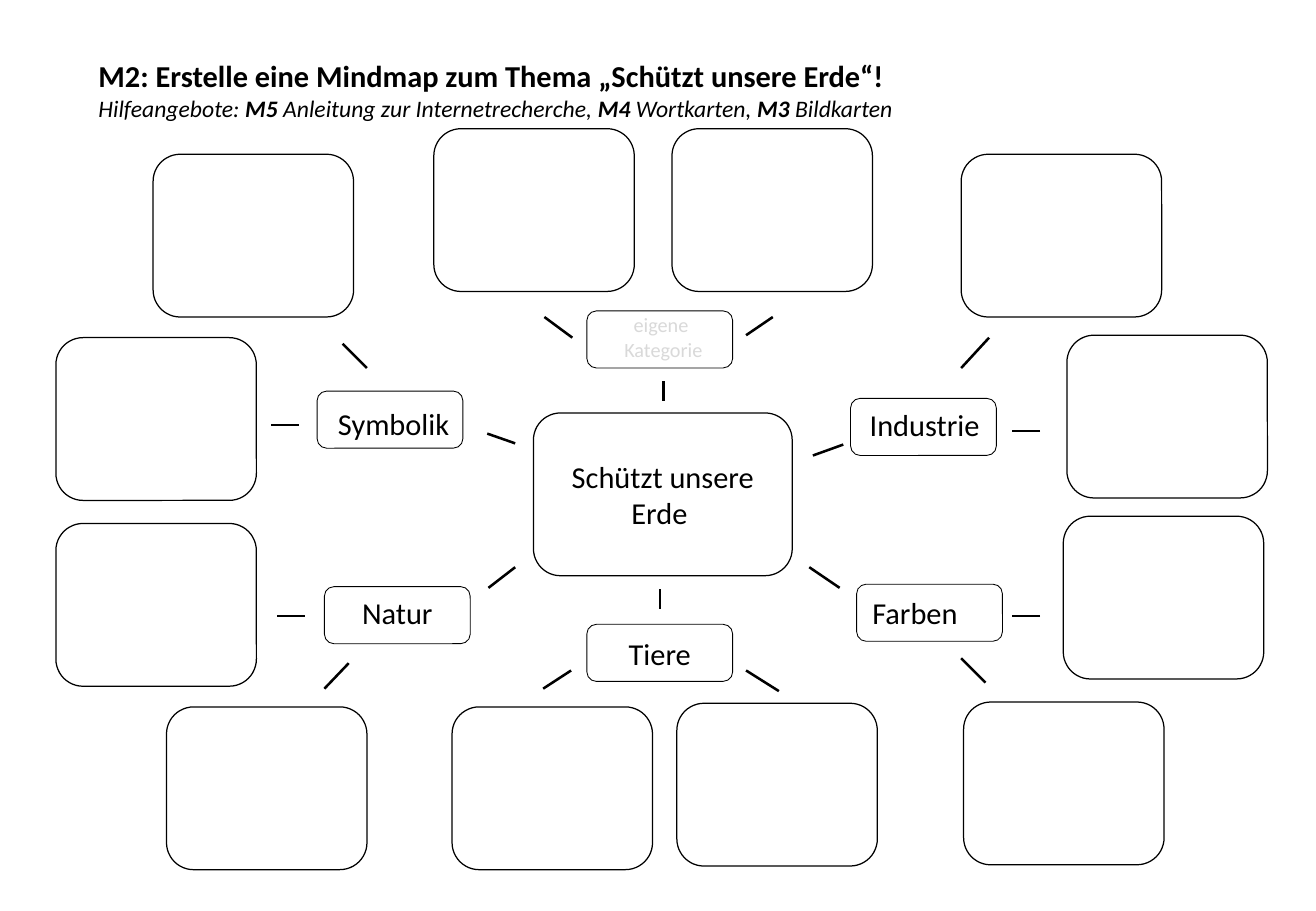
from pptx import Presentation
from pptx.dml.color import RGBColor
from pptx.enum.shapes import MSO_CONNECTOR, MSO_SHAPE
from pptx.enum.text import MSO_ANCHOR, MSO_AUTO_SIZE, PP_ALIGN
from pptx.util import Inches, Pt
from lxml.etree import SubElement
from pptx.oxml.ns import qn

BLACK, WHITE, GREY = "000000", "FFFFFF", "D9D9D9"
CARD = (1.65, 1.34)
LABEL = (1.2, 0.47)
CENTRE = (4.39, 3.4, 2.13, 1.34)

# Cards and ticks are offsets from the label's corner; nudge moves its text.
BRANCHES = [
    dict(lines=["Symbolik"], at=(2.61, 3.22), nudge=(0.03, 0.03),
         cards=[(-2.15, -0.44), (-1.35, -1.95)],
         ticks=[(1.63, 0.43, 1.4, 0.35), (-0.15, 0.28, -0.38, 0.28),
                (0.41, -0.19, 0.21, -0.39)]),
    dict(lines=["eigene ", "Kategorie"], at=(4.83, 2.56), nudge=(0.03, -0.02),
         size=12, color=GREY,
         cards=[(-1.26, -1.5), (0.7, -1.5)],
         ticks=[(0.63, 0.74, 0.63, 0.58), (1.31, 0.2, 1.53, 0.05),
                (-0.12, 0.22, -0.35, 0.05)]),
    dict(lines=["Industrie"], at=(7, 3.28), nudge=(0.01, -0.02),
         cards=[(1.78, -0.52), (0.91, -2.01)],
         ticks=[(-0.06, 0.38, -0.31, 0.47), (1.56, 0.27, 1.33, 0.27),
                (0.91, -0.25, 1.14, -0.5)]),
    dict(lines=["Natur"], at=(2.67, 4.83), nudge=(0, -0.02),
         cards=[(-2.21, -0.52), (-1.3, 0.99)],
         ticks=[(1.35, 0.01, 1.57, -0.16), (-0.16, 0.24, -0.39, 0.24),
                (0, 0.84, 0.2, 0.63)]),
    dict(lines=["Tiere"], at=(4.83, 5.14), nudge=(0, 0),
         cards=[(-1.11, 0.68), (0.74, 0.65)],
         ticks=[(0.6, -0.13, 0.6, -0.29), (-0.36, 0.53, -0.13, 0.38),
                (1.58, 0.55, 1.31, 0.38)]),
    dict(lines=["Farben"], at=(7.05, 4.81), nudge=(-0.12, 0),
         cards=[(1.7, -0.56), (0.88, 0.97)],
         ticks=[(-0.39, -0.14, -0.14, 0.03), (1.51, 0.26, 1.28, 0.26),
                (1.06, 0.81, 0.86, 0.61)]),
]


def rgb(color):
    return RGBColor.from_string(color)


def add_run(p, text, size, color=BLACK, bold=False, italic=False):
    r = p.add_run()
    r.text = text
    f = r.font
    f.name, f.size, f.bold, f.italic = "Calibri", Pt(size), bold, italic
    f.color.rgb = rgb(color)


def add_lines(tf, lines, size, color=BLACK):
    for i, line in enumerate(lines):
        p = tf.add_paragraph() if i else tf.paragraphs[0]
        p.alignment = PP_ALIGN.CENTER
        add_run(p, line, size, color)


def add_round_box(s, x, y, w, h, weight=0.75, fill=WHITE):
    sp = s.shapes.add_shape(MSO_SHAPE.ROUNDED_RECTANGLE,
                            Inches(x), Inches(y), Inches(w), Inches(h))
    sp.shadow.inherit = False
    if fill:
        sp.fill.solid()
        sp.fill.fore_color.rgb = rgb(fill)
    else:
        sp.fill.background()
    sp.line.color.rgb = rgb(BLACK)
    sp.line.width = Pt(weight)
    sp.text_frame.vertical_anchor = MSO_ANCHOR.MIDDLE
    return sp


def add_tick(s, x1, y1, x2, y2):
    line = s.shapes.add_connector(MSO_CONNECTOR.STRAIGHT, Inches(x1), Inches(y1),
                                  Inches(x2), Inches(y2))
    line.line.color.rgb = rgb(BLACK)
    line.line.width = Pt(1.5)
    SubElement(line._element.spPr, qn("a:effectLst"))


def add_heading(s, x, y, w, h):
    sp = s.shapes.title
    sp.left, sp.top, sp.width, sp.height = map(Inches, (x, y, w, h))
    tf = sp.text_frame
    tf.word_wrap = False
    tf.auto_size = MSO_AUTO_SIZE.NONE
    tf.vertical_anchor = MSO_ANCHOR.TOP
    p = tf.paragraphs[0]
    p.alignment = PP_ALIGN.LEFT
    add_run(p, "M2: Erstelle eine Mindmap zum Thema „Schützt unsere Erde“!", 18, bold=True)
    p = tf.add_paragraph()
    p.alignment = PP_ALIGN.LEFT
    hints = ["Hilfeangebote: ", "M5", " Anleitung zur Internetrecherche, ",
             "M4 ", "Wortkarten, ", "M3", " Bildkarten"]
    for i, hint in enumerate(hints):
        add_run(p, hint, 14, bold=i % 2 == 1, italic=True)


def add_branch(s, lines, at, nudge, cards, ticks, size=18, color=BLACK):
    """Draw a category label with its empty cards and connecting ticks."""
    x, y = at
    for dx, dy in cards:
        add_round_box(s, x + dx, y + dy, *CARD)
    for x1, y1, x2, y2 in ticks:
        add_tick(s, x + x1, y + y1, x + x2, y + y2)
    tf = add_round_box(s, x, y, *LABEL, weight=0.5, fill=None).text_frame
    tf.word_wrap = False
    dx, dy = nudge
    tf.margin_left, tf.margin_right = Inches(0.12 + dx), Inches(0.12 - dx)
    tf.margin_top, tf.margin_bottom = Inches(0.03 + dy), Inches(0.03 - dy)
    add_lines(tf, lines, size, color)


def main():
    prs = Presentation()
    prs.slide_width, prs.slide_height = Inches(10.83), Inches(7.5)
    s = prs.slides.add_slide(prs.slide_layouts[5])
    add_heading(s, 0.71, 0.42, 6.95, 0.64)
    add_lines(add_round_box(s, *CENTRE).text_frame, ["Schützt unsere Erde "], 18)
    for branch in BRANCHES:
        add_branch(s, **branch)
    prs.save("out.pptx")


if __name__ == "__main__":
    main()
